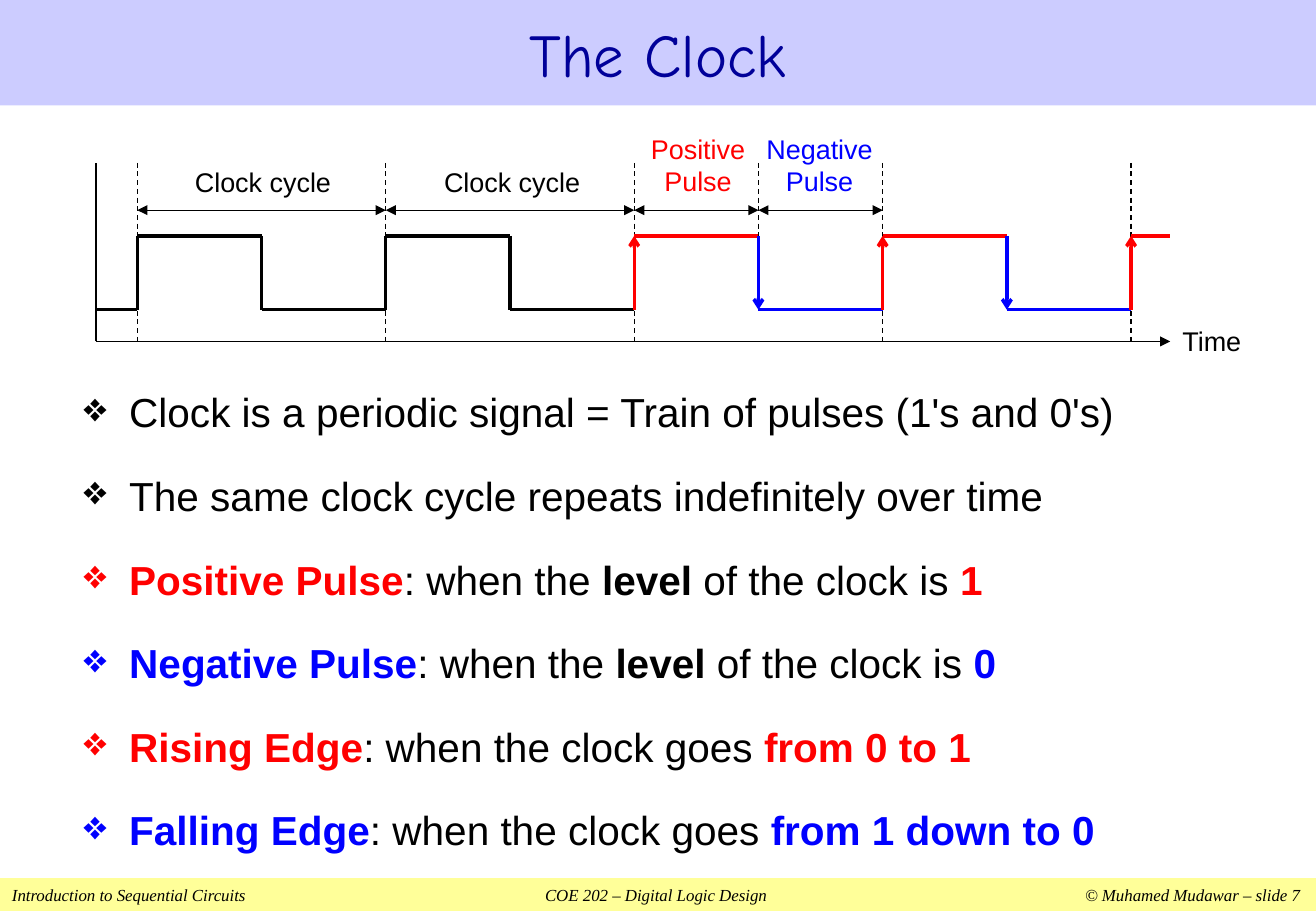
from dataclasses import dataclass
from typing import Optional

from lxml.etree import SubElement
from pptx import Presentation
from pptx.dml.color import RGBColor
from pptx.enum.dml import MSO_LINE_DASH_STYLE as Dash
from pptx.enum.shapes import MSO_CONNECTOR as Connector, MSO_SHAPE as Shape
from pptx.enum.text import MSO_ANCHOR as Anchor, PP_ALIGN as Align
from pptx.oxml.ns import qn
from pptx.util import Pt

BLACK, RED, BLUE = "000000", "FF0000", "0000FF"
WIDTH, HEIGHT = 779.76, 540
AXIS_LEFT, AXIS_RIGHT, FIRST_EDGE, HALF_CYCLE = 56.9, 693.4, 81.4, 73.6
GUIDE_TOP, ARROW_Y, HIGH, LOW, AXIS_Y = 96.5, 124.6, 139.8, 183.6, 202.4
LAST_EDGE, FIRST_COLOURED = 8, 4


@dataclass
class Line:
    x1: float
    y1: float
    x2: float
    y2: float
    colour: str = BLACK
    width: float = 0.75
    head: Optional[str] = None
    tail: Optional[str] = None
    dashed: bool = False


@dataclass
class Label:
    text: str
    left: float
    top: float
    width: float
    height: float
    colour: str = BLACK
    align: Align = Align.CENTER


@dataclass
class Span:
    text: str
    colour: str = BLACK
    bold: bool = False


def rgb(value: str) -> RGBColor:
    return RGBColor.from_string(value)


def style_font(font, name: str, size: float, colour: str) -> None:
    font.name = name
    font.size = Pt(size)
    font.color.rgb = rgb(colour)


def edge_x(index: int) -> float:
    return FIRST_EDGE + index * HALF_CYCLE


def draw_line(page, line: Line) -> None:
    connector = page.shapes.add_connector(
        Connector.STRAIGHT, Pt(line.x1), Pt(line.y1), Pt(line.x2), Pt(line.y2))
    connector.line.color.rgb = rgb(line.colour)
    connector.line.width = Pt(line.width)
    if line.dashed:
        connector.line.dash_style = Dash.DASH
    outline = connector.line._get_or_add_ln()
    for end, kind in (("a:headEnd", line.head), ("a:tailEnd", line.tail)):
        if kind:
            SubElement(outline, qn(end), type=kind)
    SubElement(connector._element.spPr, qn("a:effectLst"))


def draw_label(page, label: Label) -> None:
    box = page.shapes.add_textbox(
        Pt(label.left), Pt(label.top), Pt(label.width), Pt(label.height))
    frame = box.text_frame
    frame.word_wrap = True
    frame.margin_left = frame.margin_right = 0
    frame.text = label.text
    for para in frame.paragraphs:
        para.alignment = label.align
        style_font(para.font, "Arial", 16, label.colour)


def draw_band(page, top: float, height: float, fill: str, text: str):
    band = page.shapes.add_shape(Shape.RECTANGLE, 0, Pt(top), Pt(WIDTH), Pt(height))
    band.shadow.inherit = False
    band.fill.solid()
    band.fill.fore_color.rgb = rgb(fill)
    band.line.fill.background()
    band.text_frame.vertical_anchor = Anchor.MIDDLE
    band.text_frame.text = text
    return band.text_frame.paragraphs[0]


def draw_title(page) -> None:
    para = draw_band(page, 0, 62.6, "CCCCFF", "The Clock")
    para.alignment = Align.CENTER
    style_font(para.font, "Comic Neue", 36, "000099")


def draw_footer(page) -> None:
    para = draw_band(page, 520.6, 19.4, "FFFF99",
                     "Introduction to Sequential Circuits\tCOE 202 – Digital Logic Design"
                     "\t© Muhamed Mudawar – slide 7")
    para.alignment = Align.LEFT
    stops = SubElement(para._p.get_or_add_pPr(), qn("a:tabLst"))
    for position, align in ((381.6, "ctr"), (763.2, "r")):
        SubElement(stops, qn("a:tab"), pos=str(Pt(position)), algn=align)
    style_font(para.font, "Times New Roman", 10, BLACK)
    para.font.italic = True


def draw_bullets(page, bullets: list[list[Span]]) -> None:
    box = page.shapes.add_textbox(Pt(42.5), Pt(220.3), Pt(722.9), Pt(294.5))
    frame = box.text_frame
    frame.word_wrap = True
    for index, spans in enumerate(bullets):
        para = frame.add_paragraph() if index else frame.paragraphs[0]
        properties = para._p.get_or_add_pPr()
        properties.set("marL", str(Pt(27)))
        properties.set("indent", str(Pt(-27)))
        colour = SubElement(properties, qn("a:buClr"))
        SubElement(colour, qn("a:srgbClr"), val=spans[0].colour)
        SubElement(properties, qn("a:buChar"), char="❖")
        para.line_spacing = 1.2
        para.space_before = Pt(15)
        para.font.name = "Arial"
        para.font.size = Pt(24)
        for span in spans:
            run = para.add_run()
            run.text = span.text
            run.font.bold = span.bold
            run.font.color.rgb = rgb(span.colour)


def guide_lines() -> list[Line]:
    bottoms = {index: AXIS_Y for index in range(0, LAST_EDGE + 1, 2)} | {5: 153.4}
    return [Line(edge_x(index), GUIDE_TOP, edge_x(index), bottom, dashed=True)
            for index, bottom in bottoms.items()]


def wave_lines() -> list[Line]:
    lines = [Line(AXIS_LEFT, LOW, FIRST_EDGE, LOW, width=2)]
    for index in range(LAST_EDGE + 1):
        rising = index % 2 == 0
        before, after = (LOW, HIGH) if rising else (HIGH, LOW)
        coloured = index >= FIRST_COLOURED
        colour = (RED if rising else BLUE) if coloured else BLACK
        start, end = edge_x(index), min(edge_x(index + 1), AXIS_RIGHT)
        lines.append(Line(start, before, start, after, colour, 2,
                          tail="arrow" if coloured else None))
        lines.append(Line(start, after, end, after, colour, 2))
    return lines


def measure_lines() -> list[Line]:
    return [Line(edge_x(first), ARROW_Y, edge_x(last), ARROW_Y,
                 head="triangle", tail="triangle")
            for first, last in ((0, 2), (2, 4), (4, 5), (5, 6))]


def definition(term: str, colour: str, middle: list[Span], value: str) -> list[Span]:
    return [Span(term, colour, True), *middle, Span(value, colour, True)]


def main() -> None:
    deck = Presentation()
    deck.slide_width, deck.slide_height = Pt(WIDTH), Pt(HEIGHT)
    page = deck.slides.add_slide(deck.slide_layouts[6])
    draw_footer(page)
    draw_title(page)

    level = [Span(": when the "), Span("level", bold=True), Span(" of the clock is ")]
    change = [Span(": when the clock goes ")]
    draw_bullets(page, [
        [Span("Clock is a periodic signal = Train of pulses (1's and 0's)")],
        [Span("The same clock cycle repeats indefinitely over time")],
        definition("Positive Pulse", RED, level, "1"),
        definition("Negative Pulse", BLUE, level, "0"),
        definition("Rising Edge", RED, change, "from 0 to 1"),
        definition("Falling Edge", BLUE, change, "from 1 down to 0"),
    ])

    axes = [Line(AXIS_LEFT, AXIS_Y, AXIS_RIGHT, AXIS_Y, tail="triangle"),
            Line(AXIS_LEFT, AXIS_Y, AXIS_LEFT, GUIDE_TOP)]
    for line in guide_lines() + wave_lines() + axes + measure_lines():
        draw_line(page, line)

    for label in (
        Label("Clock cycle", 107.6, 94.7, 96.5, 26.6),
        Label("Clock cycle", 255.2, 94.7, 96.5, 26.6),
        Label("Positive\nPulse", 375.8, 74.9, 75.6, 46.1, RED),
        Label("Negative\nPulse", 447.8, 74.9, 75.6, 46.1, BLUE),
        Label("Time", 700.6, 188.6, 46.8, 26.6, align=Align.LEFT),
    ):
        draw_label(page, label)
    deck.save("out.pptx")


if __name__ == "__main__":
    main()
